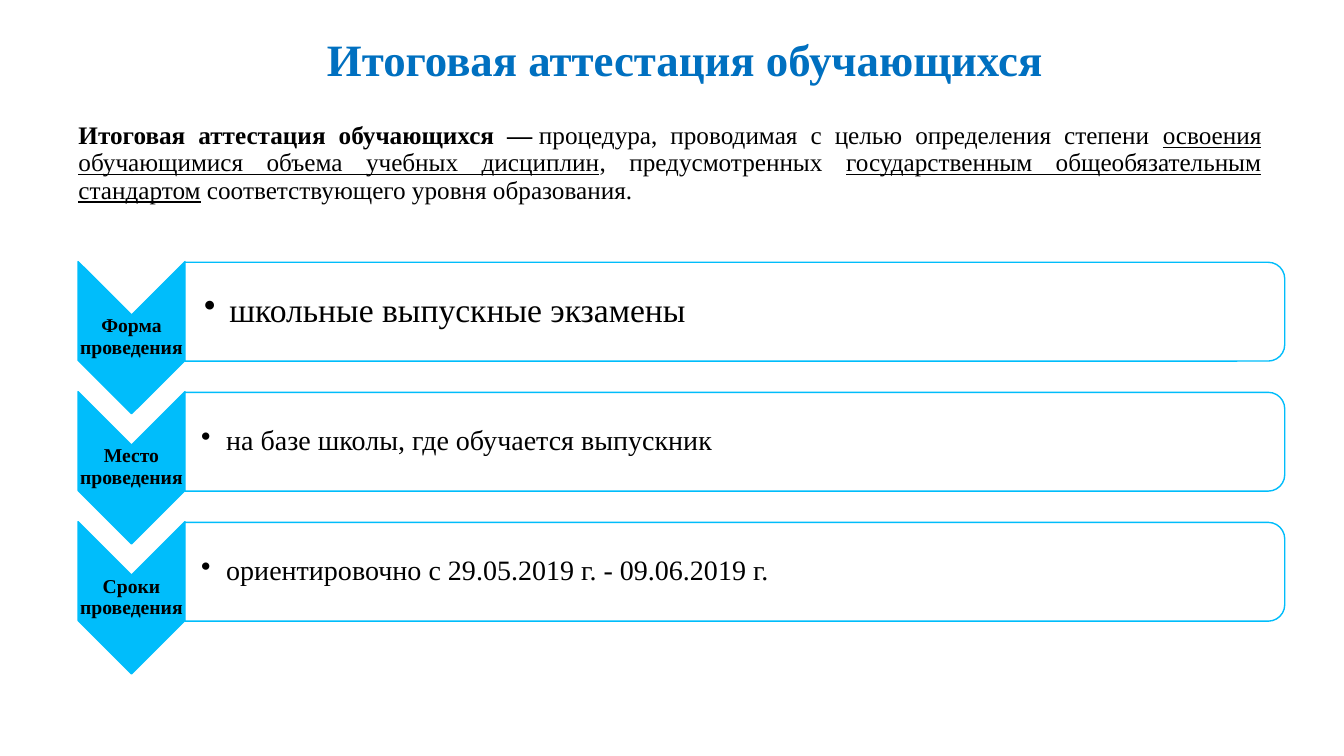
from lxml.etree import SubElement
from pptx import Presentation
from pptx.dml.color import RGBColor
from pptx.enum.shapes import MSO_SHAPE
from pptx.enum.text import MSO_ANCHOR, PP_ALIGN
from pptx.oxml.ns import qn
from pptx.util import Inches, Pt

COLORS = {"title": "0070C0", "text": "000000", "accent": "00BDFB", "bar": "FFFFFF"}
FONT = "Times New Roman"
ROW_STEP = 17.2

DEFINITION = [
    ("Итоговая аттестация обучающихся —\u00a0", {"bold": True}),
    ("процедура, проводимая с целью определения степени ", {}),
    ("освоения обучающимися объема учебных дисциплин", {"underline": True}),
    (", предусмотренных ", {}),
    ("государственным общеобязательным стандартом", {"underline": True}),
    (" соответствующего уровня образования.", {}),
]
ROWS = [
    ("Форма проведения", "школьные выпускные экзамены", 24, 0.19),
    ("Место проведения", "на базе школы, где обучается выпускник", 20, 0.16),
    ("Сроки проведения", "ориентировочно с 29.05.2019 г. - 09.06.2019 г.", 20, 0.16),
]


def add_span(para, text, size=18, color="text", bold=False, underline=False):
    span = para.add_run()
    span.text = text
    font = span.font
    font.name, font.size = FONT, Pt(size)
    font.bold, font.underline = bold, underline
    font.color.rgb = RGBColor.from_string(COLORS[color])


class SlidePainter:
    """Places elements by (left, top, width, height) in percent of the slide."""

    def __init__(self, deck):
        self.deck = deck
        self.slide = deck.slides.add_slide(deck.slide_layouts[6])

    def place(self, area):
        sides = (self.deck.slide_width, self.deck.slide_height) * 2
        return [round(share * side / 100) for share, side in zip(area, sides)]

    def text(self, area, spans, align=PP_ALIGN.LEFT, anchor=MSO_ANCHOR.TOP,
             margins=(0.1, 0.05, 0.1, 0.05), bullet=False):
        box = self.slide.shapes.add_textbox(*self.place(area))
        frame = box.text_frame
        frame.word_wrap = True
        frame.vertical_anchor = anchor
        (frame.margin_left, frame.margin_top,
         frame.margin_right, frame.margin_bottom) = map(Inches, margins)
        para = frame.paragraphs[0]
        para.alignment, para.line_spacing = align, 0.9
        if bullet:
            properties = para._p.get_or_add_pPr()
            properties.set("marL", str(Inches(0.25)))
            properties.set("indent", str(Inches(-0.25)))
            SubElement(properties, qn("a:buChar"), char="•")
        for text, style in spans:
            add_span(para, text, **style)

    def turned_shape(self, kind, area, fill, alpha=None):
        """Adds a shape turned 90° clockwise that fills the area once turned."""
        left, top, width, height = self.place(area)
        shift = (width - height) // 2
        shape = self.slide.shapes.add_shape(kind, left + shift, top - shift, height, width)
        shape.rotation = 90
        shape.shadow.inherit = False
        shape.fill.solid()
        shape.fill.fore_color.rgb = RGBColor.from_string(COLORS[fill])
        shape.line.color.rgb = RGBColor.from_string(COLORS["accent"])
        shape.line.width = Pt(1)
        if alpha:
            color = shape.fill._xPr.find(qn("a:solidFill"))[0]
            SubElement(color, qn("a:alpha"), val=str(alpha * 1000))

    def row(self, index, label, detail, size, indent):
        offset = index * ROW_STEP
        self.turned_shape(MSO_SHAPE.CHEVRON, (5.81, 34.6 + offset, 7.95, 20.13), "accent")
        self.text((5.81, 41.6 + offset, 7.95, 6), [(label, {"size": 14, "bold": True})],
                  PP_ALIGN.CENTER, MSO_ANCHOR.MIDDLE, (0.01,) * 4)
        self.turned_shape(MSO_SHAPE.ROUND_2_SAME_RECTANGLE,
                          (13.76, 34.7 + offset, 81.83, 13.07), "bar", alpha=90)
        self.text((13.76, 35.3 + offset, 81.5, 11.73), [(detail, {"size": size})],
                  anchor=MSO_ANCHOR.MIDDLE, margins=(indent, 0.01, 0.01, 0.01), bullet=True)


def main():
    deck = Presentation()
    deck.slide_width, deck.slide_height = Inches(13.33), Inches(7.5)
    page = SlidePainter(deck)
    page.text((6.82, 4.4, 88.3, 6.13),
              [("Итоговая аттестация обучающихся", {"size": 32, "color": "title", "bold": True})],
              PP_ALIGN.CENTER)
    page.text((5.1, 15.6, 89.5, 16.8), DEFINITION, PP_ALIGN.JUSTIFY)
    for index, row in enumerate(ROWS):
        page.row(index, *row)
    deck.save("out.pptx")


if __name__ == "__main__":
    main()
